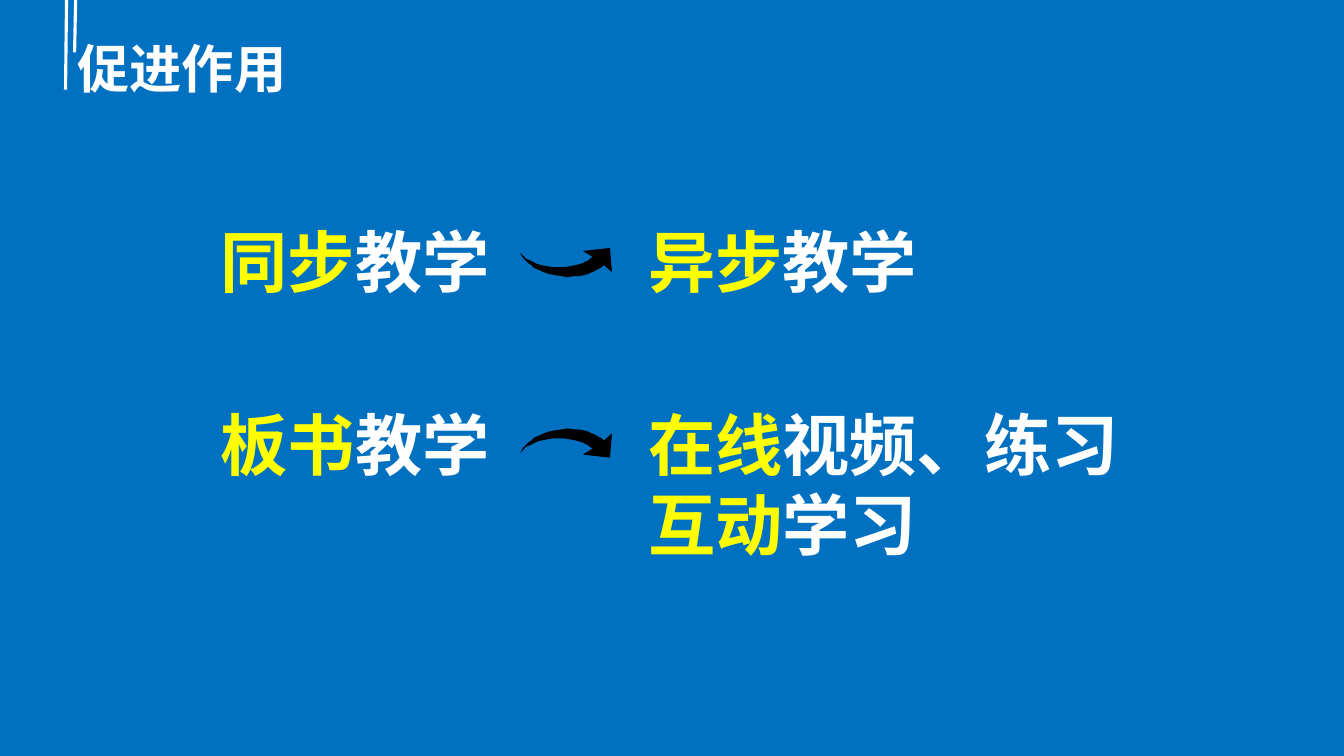
from pptx import Presentation
from pptx.dml.color import RGBColor
from pptx.enum.shapes import MSO_CONNECTOR
from pptx.enum.text import MSO_ANCHOR
from pptx.oxml.ns import qn
from pptx.util import Inches, Pt
from lxml.etree import SubElement

BLUE, WHITE, YELLOW, BLACK = "0070C0", "FFFFFF", "FFFF00", "000000"

# Rising arrow, in inches: lower edge of the tail, head, upper edge back
RISING_ARROW = [
    (5.16, 2.51), (5.18, 2.53), (5.22, 2.57), (5.25, 2.58), (5.29, 2.60),
    (5.33, 2.62), (5.37, 2.63), (5.42, 2.64), (5.48, 2.65), (5.54, 2.65),
    (5.60, 2.65), (5.66, 2.64), (5.71, 2.63), (5.75, 2.62), (5.78, 2.61),
    (5.82, 2.59), (5.84, 2.58), (5.86, 2.56), (5.88, 2.55),
    (5.78, 2.49), (6.05, 2.46), (6.07, 2.70), (5.99, 2.63),
    (5.97, 2.65), (5.93, 2.67), (5.90, 2.69), (5.87, 2.70), (5.83, 2.72),
    (5.79, 2.73), (5.74, 2.74), (5.69, 2.74), (5.63, 2.75), (5.57, 2.74),
    (5.51, 2.73), (5.45, 2.72), (5.39, 2.70), (5.35, 2.68), (5.30, 2.66),
    (5.27, 2.63), (5.24, 2.61), (5.21, 2.58), (5.19, 2.56), (5.17, 2.53),
]
# The falling arrow mirrors the rising one about y = 3.5
FALLING_ARROW = [(x, 7 - y) for x, y in RISING_ARROW]


def color(value):
    return RGBColor.from_string(value)


class Deck:
    font = "Noto Sans CJK SC"

    def __init__(self):
        self.prs = Presentation()
        self.prs.slide_width, self.prs.slide_height = Inches(13.33), Inches(7.5)
        self.slide = self.prs.slides.add_slide(self.prs.slide_layouts[6])
        background = self.slide.background.fill
        background.solid()
        background.fore_color.rgb = color(BLUE)

    def line(self, x1, y1, x2, y2):
        stroke = self.slide.shapes.add_connector(
            MSO_CONNECTOR.STRAIGHT, Inches(x1), Inches(y1), Inches(x2), Inches(y2))
        stroke.line.color.rgb = color(WHITE)
        stroke.line.width = Pt(2.25)
        SubElement(stroke._element.spPr, qn("a:effectLst"))

    def text(self, box, lines, size, anchor=MSO_ANCHOR.TOP):
        frame = self.slide.shapes.add_textbox(*map(Inches, box)).text_frame
        frame.word_wrap = True
        frame.vertical_anchor = anchor
        for i, runs in enumerate(lines):
            paragraph = frame.add_paragraph() if i else frame.paragraphs[0]
            for words, hue in runs:
                run = paragraph.add_run()
                run.text = words
                run.font.size, run.font.bold = Pt(size), True
                run.font.color.rgb = color(hue)
                run.font.name = self.font
                SubElement(run.font._element, qn("a:ea")).set("typeface", self.font)

    def phrase(self, left, top, width, height, *pairs):
        """Each line pairs a yellow keyword with white words."""
        lines = [((key, YELLOW), (rest, WHITE)) for key, rest in pairs]
        self.text((left, top, width, height), lines, 48)

    def arrow(self, points):
        start, *rest = [(Inches(x), Inches(y)) for x, y in points]
        builder = self.slide.shapes.build_freeform(*start)
        builder.add_line_segments(rest, close=True)
        outline = builder.convert_to_shape()
        outline.shadow.inherit = False
        outline.fill.solid()
        outline.fill.fore_color.rgb = color(BLACK)
        outline.line.fill.background()


def main():
    deck = Deck()

    # Heading with its two hanging lines
    deck.line(0.66, 0, 0.65, 0.89)
    deck.line(0.75, 0, 0.74, 0.52)
    deck.text((0.67, 0.3, 12, 0.74), [[("促进作用", WHITE)]], 37.3, MSO_ANCHOR.MIDDLE)

    # Synchronous to asynchronous teaching
    deck.phrase(2.09, 2.14, 3.09, 0.91, ("同步", "教学"))
    deck.arrow(RISING_ARROW)
    deck.phrase(6.33, 2.14, 3.09, 0.91, ("异步", "教学"))

    # Blackboard to online teaching
    deck.phrase(2.09, 3.95, 3.09, 0.91, ("板书", "教学"))
    deck.arrow(FALLING_ARROW)
    deck.phrase(6.33, 3.95, 4.91, 1.72, ("在线", "视频、练习"), ("互动", "学习"))

    deck.prs.save("out.pptx")


if __name__ == "__main__":
    main()
